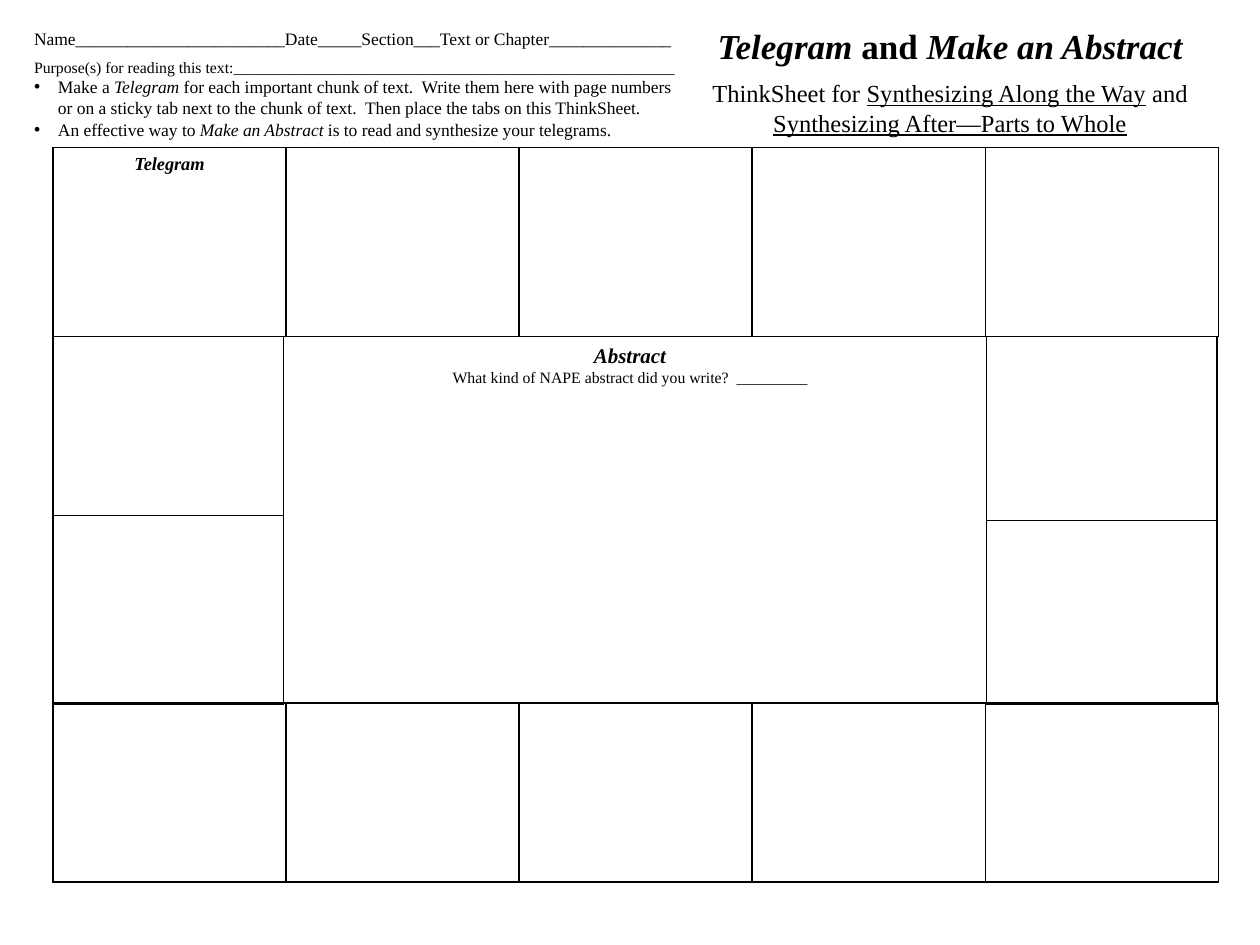
from dataclasses import dataclass

from lxml.etree import SubElement
from pptx import Presentation
from pptx.dml.color import RGBColor
from pptx.enum.text import MSO_ANCHOR, MSO_AUTO_SIZE, PP_ALIGN
from pptx.oxml import parse_xml
from pptx.oxml.ns import nsdecls, qn
from pptx.util import Inches, Pt

FONT = "Times New Roman"
COLORS = {"ink": "000000", "paper": "FFFFFF"}


@dataclass
class Span:
    text: str
    bold: bool = False
    italic: bool = False
    underline: bool = False


@dataclass
class Line:
    spans: list[Span]
    size: float
    centered: bool = False
    bullet: bool = False
    before: float = 0
    right_margin: float = 0


@dataclass
class Grid:
    left: float
    top: float
    column_width: float
    columns: int
    row_heights: list[float]


def write_lines(frame, lines: list[Line]) -> None:
    """Fill a text frame with formatted paragraphs."""
    for index, line in enumerate(lines):
        para = frame.paragraphs[0] if index == 0 else frame.add_paragraph()
        para.alignment = PP_ALIGN.CENTER if line.centered else PP_ALIGN.LEFT
        para.space_before = Pt(line.before)
        properties = para._p.get_or_add_pPr()
        indent = Inches(0.19) if line.bullet else 0
        properties.set("marL", str(indent))
        properties.set("indent", str(-indent))
        if line.right_margin:
            properties.set("marR", str(Inches(line.right_margin)))
        if line.bullet:
            SubElement(properties, qn("a:buChar"), char="•")
        else:
            SubElement(properties, qn("a:buNone"))
        for span in line.spans:
            run = para.add_run()
            run.text = span.text
            font = run.font
            font.name, font.size = FONT, Pt(line.size)
            font.bold, font.italic, font.underline = span.bold, span.italic, span.underline
            font.color.rgb = RGBColor.from_string(COLORS["ink"])


def place(box, left: float, top: float, width: float, height: float, anchor) -> None:
    """Move a text shape and fix how its text sits."""
    box.left, box.top = Inches(left), Inches(top)
    box.width, box.height = Inches(width), Inches(height)
    frame = box.text_frame
    frame.word_wrap = True
    frame.auto_size = MSO_AUTO_SIZE.NONE
    frame.vertical_anchor = anchor


def outline_cell(cell) -> None:
    """Give a cell no fill and a thin line on each side."""
    cell.fill.background()
    properties = cell._tc.get_or_add_tcPr()
    for index, side in enumerate(("lnL", "lnR", "lnT", "lnB")):
        border = parse_xml(
            f'<a:{side} {nsdecls("a")} w="{Pt(1)}"><a:solidFill>'
            f'<a:srgbClr val="{COLORS["ink"]}"/></a:solidFill></a:{side}>'
        )
        properties.insert(index, border)


def draw_grid(page, grid: Grid):
    """Draw a table of equal columns."""
    table = page.shapes.add_table(
        len(grid.row_heights), grid.columns, Inches(grid.left), Inches(grid.top),
        Inches(grid.column_width * grid.columns), Inches(sum(grid.row_heights)),
    ).table
    table.first_row = table.horz_banding = False
    for column in table.columns:
        column.width = Inches(grid.column_width)
    for row, height in zip(table.rows, grid.row_heights):
        row.height = Inches(height)
    for cell in table.iter_cells():
        outline_cell(cell)
    return table


def main() -> None:
    deck = Presentation()
    deck.slide_width, deck.slide_height = Inches(10), Inches(7.5)
    page = deck.slides.add_slide(deck.slide_layouts[1])

    # Title and subtitle
    title = page.shapes.title
    place(title, 5.5, 0.25, 4.08, 1, MSO_ANCHOR.MIDDLE)
    title.text_frame.margin_bottom = Inches(0.27)
    title.fill.solid()
    title.fill.fore_color.rgb = RGBColor.from_string(COLORS["paper"])
    write_lines(title.text_frame, [
        Line([Span("Telegram ", bold=True, italic=True), Span("and", bold=True),
              Span(" Make an Abstract", bold=True, italic=True)], 20, centered=True),
        Line([Span("ThinkSheet for "), Span("Synthesizing Along the Way", underline=True),
              Span(" and "), Span("Synthesizing After—Parts to Whole", underline=True)],
             14, centered=True, before=7),
    ])

    # Telegram cells around the abstract
    left, top, middle, bottom = 0.42, 1.17, 2.67, 5.58
    top_row = draw_grid(page, Grid(left, top, 1.85, 5, [1.5]))
    write_lines(top_row.cell(0, 0).text_frame, [
        Line([Span("Telegram", bold=True, italic=True)], 10.5, centered=True)])
    draw_grid(page, Grid(left, bottom, 1.85, 5, [1.42]))
    draw_grid(page, Grid(left, middle, 1.83, 1, [1.42, 1.5]))
    draw_grid(page, Grid(7.83, middle, 1.83, 1, [1.46, 1.46]))

    # Abstract heading
    abstract = page.shapes.add_textbox(0, 0, 0, 0)
    place(abstract, 2.71, middle, 4.75, 0.76, MSO_ANCHOR.TOP)
    write_lines(abstract.text_frame, [
        Line([Span("Abstract", bold=True, italic=True)], 12, centered=True, right_margin=0.17),
        Line([Span("What kind of NAPE abstract did you write?  _________")], 9, centered=True),
    ])

    # Student details and instructions
    details = page.placeholders[1]
    place(details, 0.17, 0.17, 5.33, 0.99, MSO_ANCHOR.TOP)
    write_lines(details.text_frame, [
        Line([Span("Name" + "_" * 24 + "Date" + "_" * 5 + "Section___Text or Chapter" + "_" * 14)], 10),
        Line([Span("Purpose(s) for reading this text:" + "_" * 56)], 9, before=5),
        Line([Span("Make a "), Span("Telegram", italic=True),
              Span(" for each important chunk of text.  Write them here with page numbers or on a "
                   "sticky tab next to the chunk of text.  Then place the tabs on this ThinkSheet.")],
             10, bullet=True),
        Line([Span("An effective way to "), Span("Make an Abstract", italic=True),
              Span(" is to read and synthesize your telegrams.")], 10, bullet=True),
    ])

    deck.save("out.pptx")


if __name__ == "__main__":
    main()
